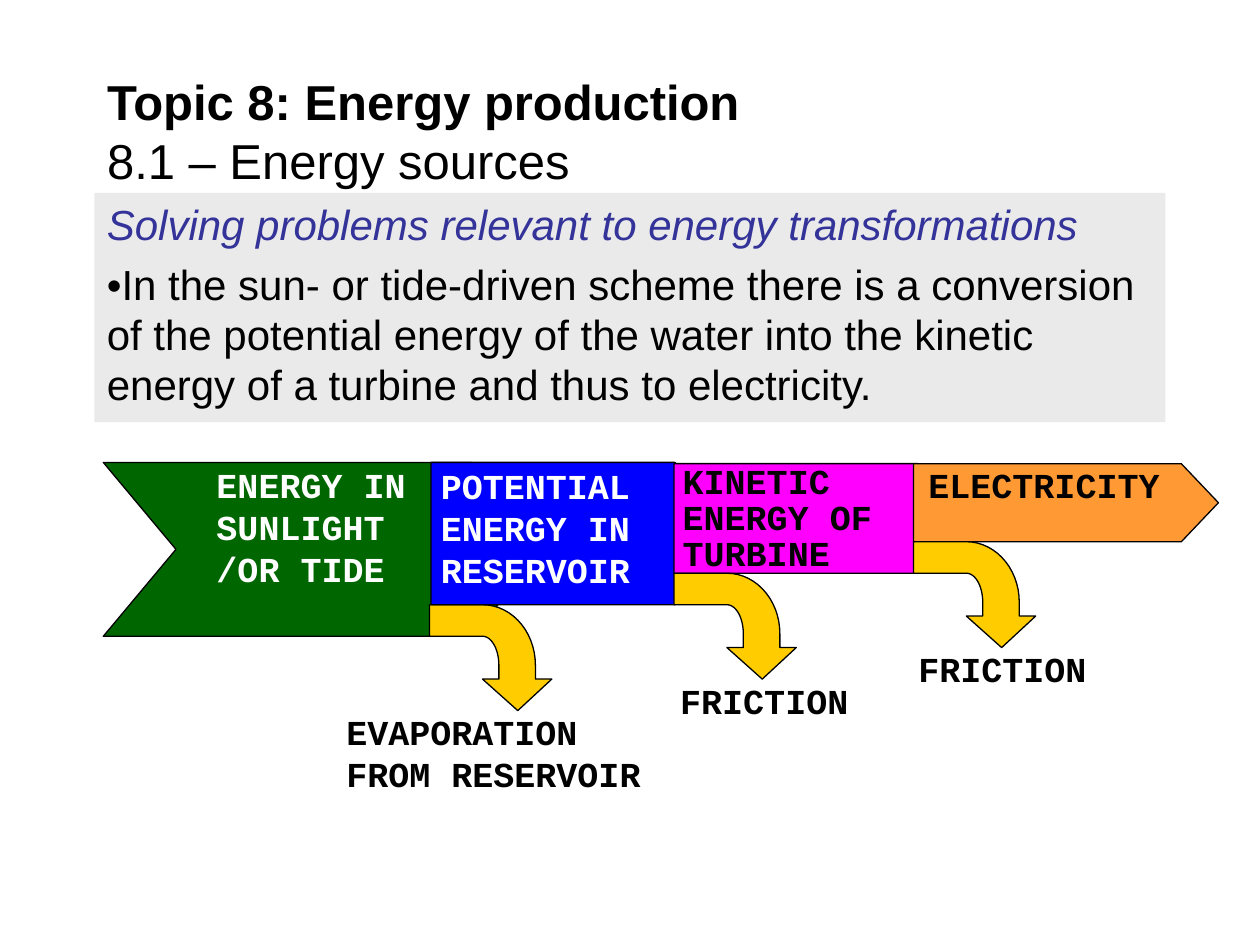
"""Build a slide on the energy transformations of a hydroelectric scheme."""
import math

import pptx
import pptx.dml.color
import pptx.enum.shapes
import pptx.enum.text
import pptx.util

Inches = pptx.util.Inches
Pt = pptx.util.Pt
RGBColor = pptx.dml.color.RGBColor
SHAPE = pptx.enum.shapes.MSO_SHAPE
ANCHOR = pptx.enum.text.MSO_ANCHOR
LEFT = pptx.enum.text.PP_ALIGN.LEFT
AUTO_SIZE = pptx.enum.text.MSO_AUTO_SIZE

BLACK = RGBColor(0x00, 0x00, 0x00)
WHITE = RGBColor(0xFF, 0xFF, 0xFF)
GREY = RGBColor(0xEA, 0xEA, 0xEA)
INDIGO = RGBColor(0x33, 0x33, 0x99)
GREEN = RGBColor(0x00, 0x66, 0x00)
BLUE = RGBColor(0x00, 0x00, 0xFF)
MAGENTA = RGBColor(0xFF, 0x00, 0xFF)
ORANGE = RGBColor(0xFF, 0x99, 0x33)
YELLOW = RGBColor(0xFF, 0xCC, 0x00)


def paint(shape, fill):
    shape.shadow.inherit = False
    shape.fill.solid()
    shape.fill.fore_color.rgb = fill
    shape.line.color.rgb = BLACK
    shape.line.width = Pt(0.75)


def add_run(paragraph, text, size, color, font="Arial", bold=False, italic=False):
    run = paragraph.add_run()
    run.text = text
    run.font.name = font
    run.font.size = Pt(size)
    run.font.color.rgb = color
    run.font.bold = bold
    run.font.italic = italic


deck = pptx.Presentation()
deck.slide_width = Inches(10)
deck.slide_height = Inches(7.5)
slide = deck.slides.add_slide(deck.slide_layouts[5])

title = slide.shapes.title
title.left, title.top = Inches(0.75), Inches(0.58)
title.width, title.height = Inches(8.5), Inches(0.91)
title.text_frame.auto_size = AUTO_SIZE.NONE
title.text_frame.vertical_anchor = ANCHOR.MIDDLE
heading = title.text_frame.paragraphs[0]
heading.alignment = LEFT
add_run(heading, "Topic 8: Energy production", 28, BLACK, bold=True)
heading.add_line_break()
add_run(heading, "8.1 – Energy sources", 28, BLACK)

summary = slide.shapes.add_shape(
    SHAPE.RECTANGLE, Inches(0.75), Inches(1.53), Inches(8.5), Inches(1.82))
paint(summary, GREY)
summary.line.fill.background()
summary.text_frame.word_wrap = True
summary.text_frame.vertical_anchor = ANCHOR.TOP
objective = summary.text_frame.paragraphs[0]
objective.alignment = LEFT
add_run(objective, "Solving problems relevant to energy transformations", 24, INDIGO, italic=True)
explanation = summary.text_frame.add_paragraph()
explanation.alignment = LEFT
explanation.space_before = Pt(5)
add_run(explanation,
        "•In the sun- or tide-driven scheme there is a conversion of the potential "
        "energy of the water into the kinetic energy of a turbine and thus to electricity.",
        24, BLACK)

quarter_turn = [math.radians(angle) for angle in range(0, 91, 6)]
outer_bend = [(0.42 + 0.42 * math.cos(a), 0.48 - 0.48 * math.sin(a)) for a in quarter_turn]
inner_bend = [(0.42 + 0.13 * math.cos(a), 0.48 - 0.23 * math.sin(a))
              for a in reversed(quarter_turn)]
loss_outline = [(0.7, 0.84), (0.97, 0.59), (0.84, 0.59), *outer_bend,
                (0, 0), (0, 0.25), *inner_bend, (0.55, 0.59), (0.42, 0.59)]

stages = [
    (SHAPE.CHEVRON, 0.418, (0.82, 3.67, 3.5, 1.38), GREEN,
     ("ENERGY IN SUNLIGHT /OR TIDE", (1.62, 3.63, 1.77, 1.1), WHITE, 1),
     (3.41, 4.8), ("EVAPORATION FROM RESERVOIR", (2.65, 5.59, 2.73, 0.77), BLACK, 1)),
    (SHAPE.PENTAGON, 0.571, (3.42, 3.67, 2.58, 1.13), BLUE,
     ("POTENTIAL ENERGY IN RESERVOIR", (3.4, 3.64, 1.77, 1.1), WHITE, 1),
     None, None),
    (SHAPE.PENTAGON, 0.742, (5.35, 3.68, 2.58, 0.87), MAGENTA,
     ("KINETIC ENERGY OF TURBINE", (5.32, 3.65, 1.77, 0.95), BLACK, 0.85),
     (5.35, 4.55), ("FRICTION", (5.3, 5.34, 1.66, 0.43), BLACK, 1)),
    (SHAPE.PENTAGON, 0.475, (7.25, 3.68, 2.42, 0.62), ORANGE,
     ("ELECTRICITY", (7.27, 3.63, 2.26, 0.43), BLACK, 1),
     (7.25, 4.3), ("FRICTION", (7.19, 5.09, 1.66, 0.43), BLACK, 1)),
]

for preset, point, frame, color, stage_label, loss_start, loss_label in stages:
    stage = slide.shapes.add_shape(preset, *map(Inches, frame))
    stage.adjustments[0] = point
    paint(stage, color)
    labels = [stage_label]

    if loss_start:
        x, y = loss_start
        outline = [(Inches(x + dx), Inches(y + dy)) for dx, dy in loss_outline]
        builder = slide.shapes.build_freeform(*outline[0])
        builder.add_line_segments(outline[1:], close=True)
        paint(builder.convert_to_shape(), YELLOW)
        labels.append(loss_label)

    for text, place, ink, spacing in labels:
        label = slide.shapes.add_textbox(*map(Inches, place)).text_frame
        label.word_wrap = True
        label.auto_size = AUTO_SIZE.SHAPE_TO_FIT_TEXT
        label.paragraphs[0].line_spacing = spacing
        add_run(label.paragraphs[0], text, 20, ink, "Courier New", bold=True)

deck.save("out.pptx")
